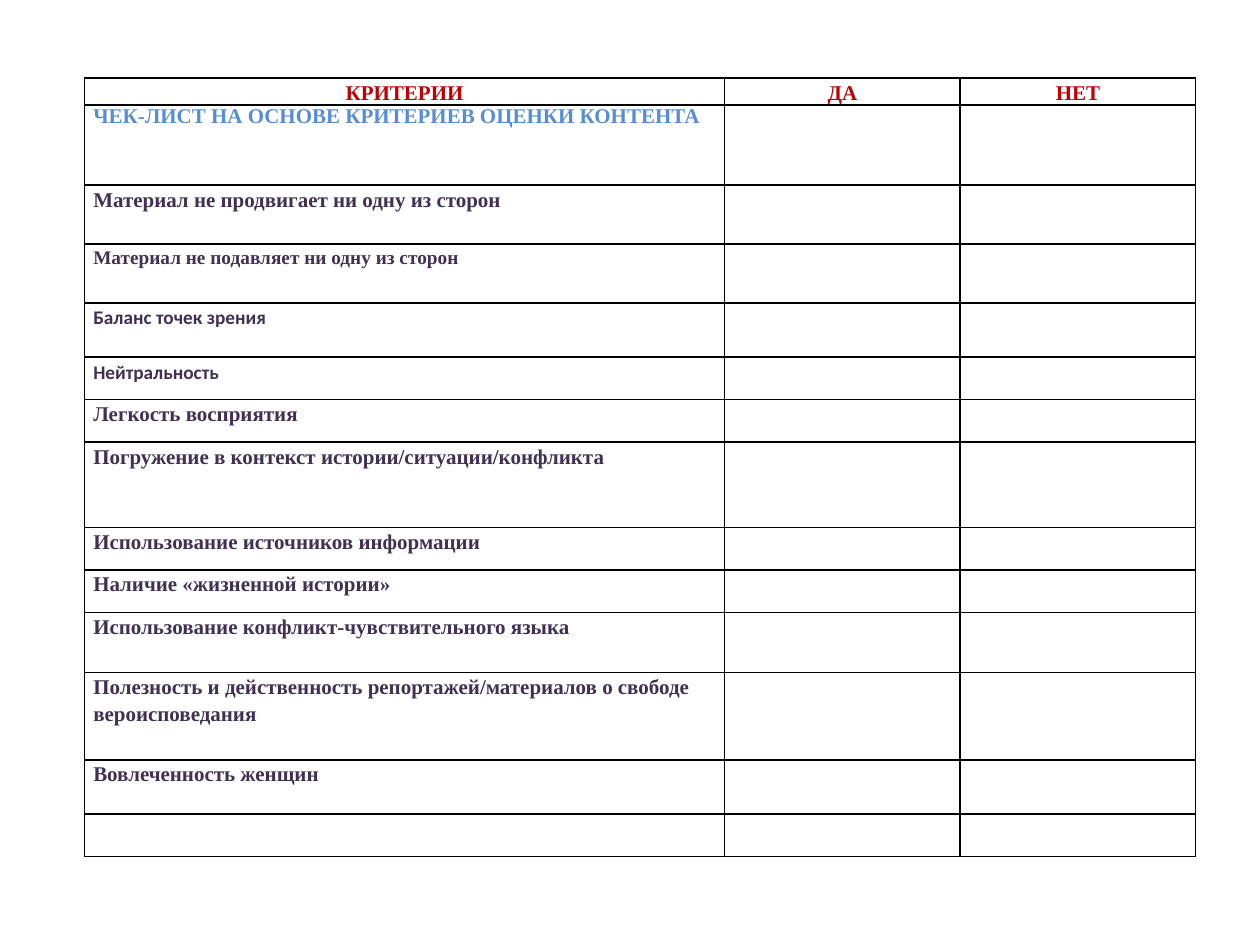
"""Build a one-slide content checklist as a table with yes and no columns."""
from dataclasses import dataclass

from lxml.etree import SubElement
from pptx import Presentation
from pptx.dml.color import RGBColor as RGB
from pptx.enum.text import PP_ALIGN as Align
from pptx.oxml.ns import qn
from pptx.util import Pt


@dataclass(frozen=True)
class Theme:
    head: str = "C00000"
    title: str = "558ED5"
    body: str = "403152"
    line: str = "000000"
    serif: str = "Times New Roman"
    sans: str = "Calibri"
    size: int = 12
    small: int = 11


def edge(cell, color):
    props = cell._tc.get_or_add_tcPr()
    for side in ("lnL", "lnR", "lnT", "lnB"):
        line = SubElement(props, qn(f"a:{side}"), w=str(Pt(1)))
        fill = SubElement(line, qn("a:solidFill"))
        SubElement(fill, qn("a:srgbClr"), val=color)


look = Theme()
head = (look.serif, look.size, look.head)
title = (look.serif, look.size, look.title)
body = (look.serif, look.size, look.body)
small = (look.serif, look.small, look.body)
sans = (look.sans, look.small, look.body)

rows = [
    (15.4, head, ["КРИТЕРИИ", "ДА", "НЕТ"]),
    (45.7, title, ["ЧЕК-ЛИСТ НА ОСНОВЕ КРИТЕРИЕВ ОЦЕНКИ КОНТЕНТА"]),
    (33.7, body, ["Материал не продвигает ни одну из сторон"]),
    (33.7, small, ["Материал не подавляет ни одну из сторон"]),
    (31.1, sans, ["Баланс точек зрения"]),
    (24.3, sans, ["Нейтральность"]),
    (24.3, body, ["Легкость восприятия"]),
    (48.6, body, ["Погружение в контекст истории/ситуации/конфликта"]),
    (24.3, body, ["Использование источников информации"]),
    (24.3, body, ["Наличие «жизненной истории»"]),
    (34.3, body, ["Использование конфликт-чувствительного языка"]),
    (50, body, ["Полезность и действенность репортажей/материалов о свободе вероисповедания"]),
    (30.9, body, ["Вовлеченность женщин"]),
    (24.3, body, []),
]
widths = [365.8, 134.6, 134.6]

deck = Presentation()
deck.slide_width, deck.slide_height = Pt(720), Pt(540)
slide = deck.slides.add_slide(deck.slide_layouts[6])

high = sum(row[0] for row in rows)
frame = slide.shapes.add_table(
    len(rows), len(widths), Pt(48.3), Pt(44.6), Pt(sum(widths)), Pt(high))
table = frame.table
table.first_row = table.horz_banding = False
for col, width in zip(table.columns, widths):
    col.width = Pt(width)

for row, (height, (face, size, color), texts) in zip(table.rows, rows):
    row.height = Pt(height)
    for num, cell in enumerate(row.cells):
        edge(cell, look.line)
        cell.fill.background()
        cell.margin_left = cell.margin_right = Pt(5)
        cell.margin_top = cell.margin_bottom = 0
        para = cell.text_frame.paragraphs[0]
        if num < len(texts):
            para.text = texts[num]
        if color == look.head:
            para.alignment = Align.CENTER
        if color != look.title:
            para.line_spacing = 1.15
        font = para.font
        font.name, font.size, font.bold = face, Pt(size), True
        font.color.rgb = RGB.from_string(color)

deck.save("out.pptx")
